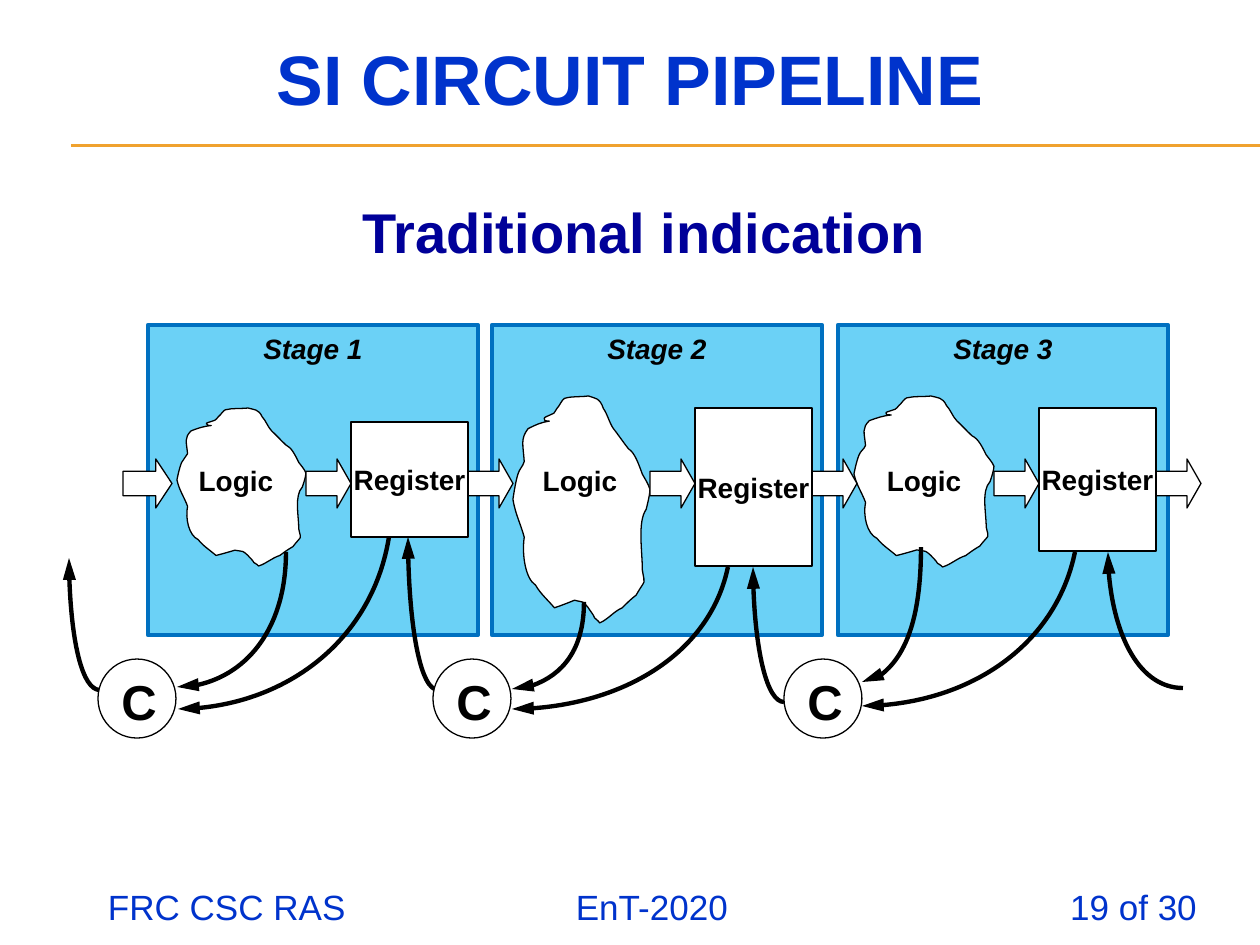
from dataclasses import dataclass

from lxml.etree import SubElement
from pptx import Presentation
from pptx.dml.color import RGBColor
from pptx.enum.shapes import MSO_CONNECTOR, MSO_SHAPE
from pptx.enum.text import MSO_ANCHOR, PP_ALIGN
from pptx.oxml.ns import qn
from pptx.util import Pt

PX = 914400 / 126  # EMU per px


@dataclass(frozen=True)
class Theme:
    font: str = "Arial"
    blue: RGBColor = RGBColor(0x00, 0x33, 0xCC)
    navy: RGBColor = RGBColor(0x00, 0x00, 0x99)
    gold: RGBColor = RGBColor(0xF0, 0xA2, 0x2E)
    stage_fill: RGBColor = RGBColor(0x00, 0xB0, 0xF0)
    stage_edge: RGBColor = RGBColor(0x00, 0x70, 0xC0)
    black: RGBColor = RGBColor(0, 0, 0)
    white: RGBColor = RGBColor(255, 255, 255)
    title: int = 40
    subtitle: int = 32
    circle: int = 28
    footer: int = 20
    label: int = 16
    thin: float = 0.75
    thick: float = 2.5


theme = Theme()
prs = Presentation()
prs.slide_width, prs.slide_height = round(1260 * PX), round(945 * PX)
slide = prs.slides.add_slide(prs.slide_layouts[5])
shapes = slide.shapes


def write(shape, text, size, color=theme.black, bold=True, anchor=MSO_ANCHOR.MIDDLE,
          wrap=False, align=PP_ALIGN.CENTER):
    frame = shape.text_frame
    frame.word_wrap = wrap
    frame.vertical_anchor = anchor
    paragraph = frame.paragraphs[0]
    paragraph.text = text
    paragraph.alignment = align
    font = paragraph.font
    font.name, font.size, font.bold = theme.font, Pt(size), bold
    font.color.rgb = color
    return paragraph


def outline(shape, fill=theme.white, edge=theme.black, width=theme.thin):
    shape.shadow.inherit = False
    if fill is None:
        shape.fill.background()
    else:
        shape.fill.solid()
        shape.fill.fore_color.rgb = fill
    shape.line.color.rgb = edge
    shape.line.width = Pt(width)
    return shape


# Title, double rule and subtitle
title = shapes.title
title.left, title.top, title.width, title.height = (round(v * PX) for v in (0, 20, 1260, 116))
write(title, "SI CIRCUIT PIPELINE", theme.title, theme.blue, wrap=True)

for y in (145, 146):
    rule = shapes.add_connector(MSO_CONNECTOR.STRAIGHT, *(round(v * PX) for v in (71, y, 1260, y)))
    rule.line.color.rgb = theme.gold
    rule.line.width = Pt(theme.thin)
    SubElement(rule.element.spPr, qn("a:effectLst"))

subtitle = shapes.add_textbox(*(round(v * PX) for v in (98, 187, 1092, 88)))
write(subtitle, "Traditional indication", theme.subtitle, theme.navy, wrap=True)

# Footer: left, centred and right parts on tab stops
footer = shapes.add_textbox(*(round(v * PX) for v in (0, 879, 1260, 40)))
footer.text_frame.margin_left = round(108 * PX)
footer_line = write(footer, "FRC CSC RAS\tEnT-2020\t19 of 30", theme.footer, theme.blue,
                    bold=False, anchor=MSO_ANCHOR.TOP, wrap=True, align=PP_ALIGN.LEFT)
tabs = SubElement(footer_line._p.get_or_add_pPr(), qn("a:tabLst"))
footer_line._p.pPr.insert(0, tabs)
for position, alignment in ((544, "ctr"), (1089, "r")):
    SubElement(tabs, qn("a:tab"), pos=str(round(position * PX)), algn=alignment)

# Translucent stages
for number, x in enumerate((148, 492, 838), start=1):
    stage = shapes.add_shape(MSO_SHAPE.RECTANGLE, *(round(v * PX) for v in (x, 325, 330, 310)))
    outline(stage, theme.stage_fill, theme.stage_edge, theme.thick)
    stage_color = stage.element.spPr.find(qn("a:solidFill")).find(qn("a:srgbClr"))
    SubElement(stage_color, qn("a:alpha"), val="58000")
    write(stage, f"Stage {number}", theme.label, anchor=MSO_ANCHOR.TOP).font.italic = True

# Cloud outline on a 109 x 180 grid: a start point, then three points per Bézier curve
CLOUD = [
    (29, 20), (22, 21), (18, 23), (12, 26), (6, 34), (8, 38), (9, 52),
    (8, 56), (5, 58), (4, 62), (2, 68), (0, 82), (0, 82),
    (2, 94), (6, 101), (9, 112), (7, 126), (10, 145), (18, 150),
    (22, 157), (28, 162), (33, 168), (39, 166), (44, 164), (49, 162),
    (57, 164), (55, 162), (60, 168), (61, 170), (64, 173), (65, 176),
    (67, 177), (69, 180), (69, 180), (76, 177), (80, 171), (87, 168),
    (91, 164), (94, 161), (98, 158), (106, 144), (105, 151), (103, 138),
    (103, 123), (99, 100), (106, 90), (107, 86), (109, 78), (109, 74),
    (108, 70), (104, 64), (103, 62), (100, 54), (97, 45), (92, 42),
    (88, 37), (84, 31), (80, 26), (77, 22), (75, 14), (72, 10),
    (69, 1), (65, 2), (60, 0), (53, 1), (47, 0), (41, 2),
    (39, 3), (37, 8), (35, 10), (34, 11), (33, 14), (32, 14),
    (28, 16), (24, 17), (25, 18), (25, 21), (27, 19), (29, 20),
]
clouds = [(177, 408, 129, 158), (513, 396, 137, 227), (854, 396, 140, 171)]

# Signal curves, each ending at its arrowhead
signals = [
    [(100, 690), (82, 690), (69, 631), (69, 558)],         # C1 to the outside
    [(286, 552), (286, 626), (239, 688), (177, 687)],      # logic 1 to C1
    [(389, 537), (373, 636), (282, 709), (178, 709)],      # register 1 to C1
    [(438, 690), (421, 690), (408, 622), (408, 537)],      # C2 to register 1
    [(584, 602), (584, 650), (552, 689), (512, 689)],      # logic 2 to C2
    [(728, 567), (711, 649), (620, 709), (512, 709)],      # register 2 to C2
    [(784, 702), (767, 702), (753, 641), (753, 567)],      # C3 to register 2
    [(921, 547), (921, 621), (895, 682), (862, 682)],      # logic 3 to C3
    [(1075, 552), (1057, 640), (968, 706), (862, 706)],    # register 3 to C3
    [(1183, 688), (1140, 688), (1108, 626), (1108, 552)],  # outside to register 3
]

# Clouds and signals: every three points become one Bézier curve
traces = [([(x + u * w / 109, y + v * h / 180) for u, v in CLOUD], True)
          for x, y, w, h in clouds]
traces += [(signal, False) for signal in signals]
for points, is_cloud in traces:
    start, *route = [(x * PX, y * PX) for x, y in points]
    builder = shapes.build_freeform(*start)
    builder.add_line_segments(route, close=is_cloud)
    trace = builder.convert_to_shape()
    segments = list(trace.element.spPr.iter(qn("a:lnTo")))
    for i in range(0, len(route), 3):
        first, *others = segments[i:i + 3]
        first.tag = qn("a:cubicBezTo")
        for other in others:
            first.append(other[0])
            other.getparent().remove(other)
    if is_cloud:
        outline(trace)
    else:
        outline(trace, fill=None, width=theme.thick)
        SubElement(trace.element.spPr.find(qn("a:ln")), qn("a:tailEnd"),
                   type="triangle", w="med", len="lg")

# Data arrows
for x, width in ((123, 49), (306, 45), (468, 45), (650, 45), (812, 45), (994, 45), (1156, 45)):
    arrow = shapes.add_shape(MSO_SHAPE.RIGHT_ARROW, *(round(v * PX) for v in (x, 459, width, 49)))
    arrow.adjustments[1] = 0.33 if width == 49 else 0.31
    outline(arrow)

# Logic labels
for x in (166, 510, 854):
    logic = shapes.add_textbox(*(round(v * PX) for v in (x, 409, 140, 143)))
    write(logic, "Logic", theme.label)

# Registers
for x, y, height in ((351, 422, 115), (695, 408, 158), (1039, 408, 143)):
    register = shapes.add_shape(MSO_SHAPE.RECTANGLE, *(round(v * PX) for v in (x, y, 117, height)))
    write(outline(register), "Register", theme.label)

# C elements, with their letters set slightly low
for x in (98, 433, 784):
    c_element = shapes.add_shape(MSO_SHAPE.FLOWCHART_CONNECTOR,
                                 *(round(v * PX) for v in (x, 659, 78, 79)))
    outline(c_element)
    letter = shapes.add_textbox(*(round(v * PX) for v in (x - 12, 636, 106, 129)))
    write(letter, "C", theme.circle)

prs.save("out.pptx")
